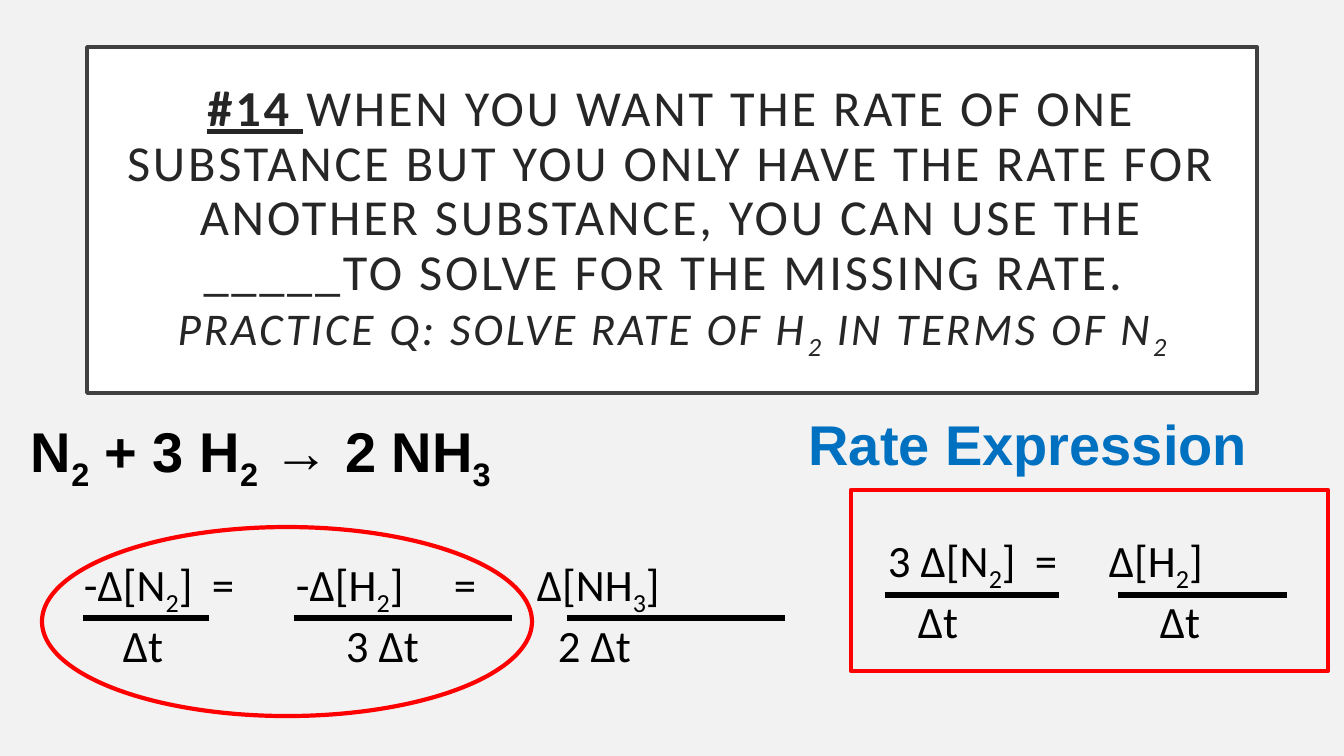
from lxml import etree
from pptx import Presentation
from pptx.dml.color import RGBColor
from pptx.enum.shapes import MSO_CONNECTOR, MSO_SHAPE
from pptx.enum.text import MSO_ANCHOR, MSO_AUTO_SIZE, PP_ALIGN
from pptx.oxml.ns import qn
from pptx.util import Emu, Pt

STRAIGHT = MSO_CONNECTOR.STRAIGHT
RECTANGLE, OVAL = MSO_SHAPE.RECTANGLE, MSO_SHAPE.OVAL
LEFT, CENTER, RIGHT = PP_ALIGN.LEFT, PP_ALIGN.CENTER, PP_ALIGN.RIGHT
TOP, MIDDLE = MSO_ANCHOR.TOP, MSO_ANCHOR.MIDDLE
NO_FIT = MSO_AUTO_SIZE.NONE
EMU_PER_PX = 914400 / 100.8
TITLE_SPACING = "200"
INSET = 10

BLACK, RED, BLUE = "000000", "FF0000", "0070C0"
BODY = {"name": "Calibri", "size": Pt(32), "color": BLACK}
HEADING = {"name": "Arial", "size": Pt(40), "bold": True, "color": BLACK}
TITLE = {"name": "Calibri", "size": Pt(36), "bold": False, "color": "262626"}


def px(length):
    """Turn pixels into EMU."""
    return Emu(round(length * EMU_PER_PX))


def rgb(code):
    """Turn a hex string into a colour."""
    return RGBColor.from_string(code)


def place(item, left, top, width, height):
    """Move and size a placeholder."""
    box = {"left": left, "top": top, "width": width, "height": height}
    for side, length in box.items():
        setattr(item, side, px(length))


def add_text(paragraph, text, style):
    """Add runs to a paragraph, with subscripts between tildes."""
    for index, piece in enumerate(text.split("~")):
        if not piece:
            continue
        run = paragraph.add_run()
        run.text = piece
        for key, setting in style.items():
            if key == "color":
                run.font.color.rgb = rgb(setting)
            else:
                setattr(run.font, key, setting)
        if index % 2:
            run.font._element.set("baseline", "-25000")


def set_tabs(paragraph, stops):
    """Set left tab stops, measured in pixels from the text edge."""
    tabs = etree.SubElement(paragraph._p.get_or_add_pPr(), qn("a:tabLst"))
    for stop in stops:
        etree.SubElement(tabs, qn("a:tab"), pos=str(px(stop)), algn="l")


def fill_title(title):
    """Fill the framed title with the question."""
    place(title, 87, 47, 1170, 346)
    title.fill.solid()
    title.fill.fore_color.rgb = rgb("FFFFFF")
    title.line.color.rgb = rgb("404040")
    title.line.width = Pt(2.5)
    frame = title.text_frame
    settings = {"auto_size": NO_FIT, "word_wrap": True, "vertical_anchor": MIDDLE}
    for side in ("left", "top", "right", "bottom"):
        settings["margin_" + side] = px(20)
    for key, setting in settings.items():
        setattr(frame, key, setting)
    question = frame.paragraphs[0]
    question.alignment = CENTER
    question.line_spacing = 0.9
    add_text(question, "#14 ", {**TITLE, "bold": True, "underline": True})
    add_text(question, "WHEN YOU WANT THE RATE OF ONE SUBSTANCE BUT YOU ONLY HAVE "
             "THE RATE FOR ANOTHER SUBSTANCE, YOU CAN USE THE _____TO SOLVE FOR "
             "THE MISSING RATE. ", TITLE)
    question.add_line_break()
    add_text(question, "PRACTICE Q: SOLVE RATE OF H~2~ IN TERMS OF N~2~",
             {**TITLE, "size": Pt(32.4), "italic": True})
    for run in question.runs:
        run.font._element.set("spc", TITLE_SPACING)


def fill_subheading(body):
    """Fill the body placeholder with the right-hand heading."""
    place(body, 87, 404, 1170, 197)
    body.text_frame.auto_size = NO_FIT
    body.text_frame.vertical_anchor = TOP
    heading = body.text_frame.paragraphs[0]
    heading.alignment = RIGHT
    heading.space_before = Pt(0)
    props = heading._p.get_or_add_pPr()
    for key in ("marL", "indent"):
        props.set(key, "0")
    etree.SubElement(props, qn("a:buNone"))
    add_text(heading, "Rate Expression", {**HEADING, "color": BLUE})


def add_lines(slide, box, rows, style):
    """Add a text box whose rows are lists of (x, text) parts."""
    frame = slide.shapes.add_textbox(*map(px, box)).text_frame
    frame.word_wrap = True
    start = box[0] + INSET
    for index, parts in enumerate(rows):
        line = frame.add_paragraph() if index else frame.paragraphs[0]
        line.alignment = LEFT
        stops = [x - start for x, _ in parts if x > start]
        if stops:
            set_tabs(line, stops)
        lead = "\t" if parts[0][0] > start else ""
        add_text(line, lead + "\t".join(text for _, text in parts), style)


def add_fraction_bar(slide, left, right, y):
    """Draw one fraction bar."""
    bar = slide.shapes.add_connector(STRAIGHT, px(left), px(y), px(right), px(y))
    bar.line.color.rgb = rgb(BLACK)
    bar.line.width = Pt(3.75)
    etree.SubElement(bar._element.spPr, qn("a:effectLst"))


def add_outline(slide, kind, box):
    """Draw an unfilled red outline."""
    outline = slide.shapes.add_shape(kind, *map(px, box))
    outline.shadow.inherit = False
    outline.fill.background()
    outline.line.color.rgb = rgb(RED)
    outline.line.width = Pt(3)


def main():
    """Build the slide."""
    deck = Presentation()
    deck.slide_width, deck.slide_height = px(1344), px(756)
    slide = deck.slides.add_slide(deck.slide_layouts[1])
    slide.background.fill.solid()
    slide.background.fill.fore_color.rgb = rgb("F2F2F2")
    fill_title(slide.shapes.title)
    fill_subheading(slide.placeholders[1])

    equation = [[(31, "N~2~ + 3 H~2~ → 2 NH~3~")]]
    add_lines(slide, (21, 412, 523, 78), equation, HEADING)

    rates = [
        [(84, "-Δ[N~2~]"), (212, "="), (296, "-Δ[H~2~]"), (454, "="),
         (537, "Δ[NH~3~]")],
        [(123, "Δt"), (346, "3 Δt"), (558, "2 Δt")],
    ]
    add_lines(slide, (74, 552, 777, 119), rates, BODY)
    for left, right in ((83, 209), (294, 512), (567, 785)):
        add_fraction_bar(slide, left, right, 618)
    add_outline(slide, OVAL, (42, 527, 490, 189))

    expression = [
        [(888, "3 Δ[N~2~]"), (1035, "="), (1109, "Δ[H~2~]")],
        [(918, "Δt"), (1160, "Δt")],
    ]
    add_lines(slide, (868, 528, 436, 119), expression, BODY)
    for left, right in ((885, 1059), (1118, 1287)):
        add_fraction_bar(slide, left, right, 595)
    add_outline(slide, RECTANGLE, (851, 490, 477, 181))

    deck.save("out.pptx")


if __name__ == "__main__":
    main()
